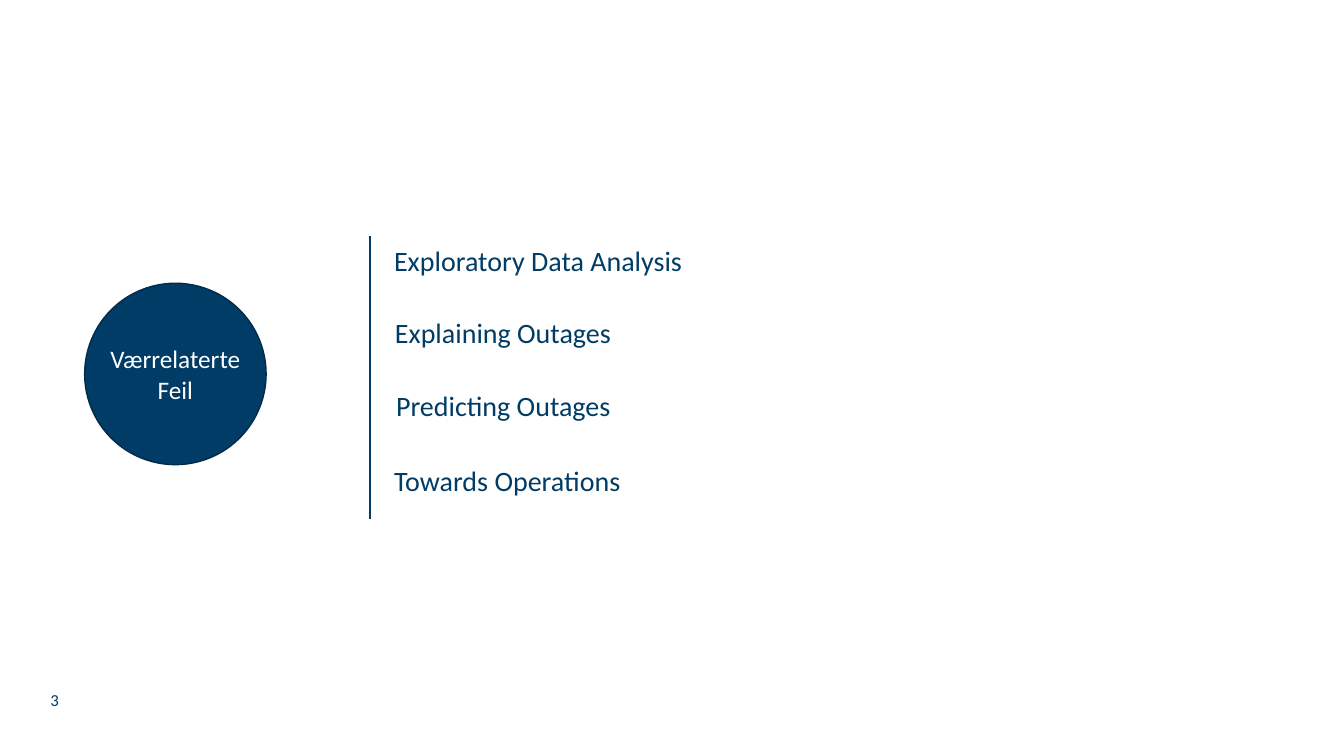
from dataclasses import dataclass

from lxml import etree
from pptx import Presentation
from pptx.dml.color import RGBColor
from pptx.enum.shapes import MSO_CONNECTOR, MSO_SHAPE
from pptx.enum.text import MSO_ANCHOR, MSO_AUTO_SIZE, PP_ALIGN
from pptx.oxml.ns import qn
from pptx.slide import Slide
from pptx.text.text import TextFrame
from pptx.util import Inches, Pt

OVAL = MSO_SHAPE.OVAL
STRAIGHT = MSO_CONNECTOR.STRAIGHT
MIDDLE = MSO_ANCHOR.MIDDLE
FIT_SHAPE = MSO_AUTO_SIZE.SHAPE_TO_FIT_TEXT
LEFT, CENTER = PP_ALIGN.LEFT, PP_ALIGN.CENTER

NAVY = RGBColor(0x00, 0x3C, 0x65)
DARK_NAVY = RGBColor(0x00, 0x2C, 0x4B)
WHITE = RGBColor(0xFF, 0xFF, 0xFF)
FONT = "Calibri"

SLIDE_WIDTH, SLIDE_HEIGHT = Inches(13.33), Inches(7.5)
TOPIC_HEIGHT = 5.87


@dataclass(frozen=True)
class Topic:
    """An agenda line, placed in percent of the slide's size."""
    text: str
    left: float
    top: float
    width: float


TOPICS = [
    Topic("Exploratory Data Analysis", 28.58, 31.6, 23.1),
    Topic("Explaining Outages", 28.65, 41.07, 17.7),
    Topic("Predicting Outages", 28.73, 50.8, 17.63),
    Topic("Towards Operations", 28.58, 60.67, 18.53),
]


def across(percent: float) -> int:
    return round(SLIDE_WIDTH * percent / 100)


def down(percent: float) -> int:
    return round(SLIDE_HEIGHT * percent / 100)


def write(frame: TextFrame, lines: list[str], size: int,
          color: RGBColor, alignment: PP_ALIGN = LEFT) -> None:
    for index, line in enumerate(lines):
        para = frame.add_paragraph() if index else frame.paragraphs[0]
        para.alignment = alignment
        span = para.add_run()
        span.text = line
        span.font.name = FONT
        span.font.size = Pt(size)
        span.font.color.rgb = color


def add_page_number(page: Slide, number: str) -> None:
    box = page.shapes.add_textbox(across(3.75), down(91.2), across(2.55), down(2.67))
    frame = box.text_frame
    frame.margin_left = frame.margin_right = 0
    frame.margin_top = frame.margin_bottom = 0
    frame.vertical_anchor = MIDDLE
    frame.word_wrap = True
    write(frame, [number], 12, NAVY)


def add_theme_circle(page: Slide, lines: list[str]) -> None:
    diameter = down(24)
    circle = page.shapes.add_shape(OVAL, across(6.3), down(37.47), diameter, diameter)
    circle.shadow.inherit = False
    circle.fill.solid()
    circle.fill.fore_color.rgb = NAVY
    circle.line.color.rgb = DARK_NAVY
    circle.line.width = Pt(1)
    circle.text_frame.word_wrap = False
    circle.text_frame.vertical_anchor = MIDDLE
    write(circle.text_frame, lines, 18, WHITE, CENTER)


def add_topic(page: Slide, topic: Topic) -> None:
    box = page.shapes.add_textbox(across(topic.left), down(topic.top),
                                  across(topic.width), down(TOPIC_HEIGHT))
    box.text_frame.word_wrap = False
    box.text_frame.auto_size = FIT_SHAPE
    write(box.text_frame, [topic.text], 20, NAVY)


def add_divider(page: Slide) -> None:
    divider = page.shapes.add_connector(STRAIGHT, across(27.53), down(31.2),
                                        across(27.53), down(68.67))
    divider.line.color.rgb = NAVY
    divider.line.width = Pt(2)
    etree.SubElement(divider._element.spPr, qn("a:effectLst"))


def main() -> None:
    deck = Presentation()
    deck.slide_width, deck.slide_height = SLIDE_WIDTH, SLIDE_HEIGHT
    page = deck.slides.add_slide(deck.slide_layouts[6])

    # Page number and theme
    add_page_number(page, "3")
    add_theme_circle(page, ["Værrelaterte", "Feil"])

    # Agenda beside its divider
    for topic in TOPICS:
        add_topic(page, topic)
    add_divider(page)

    deck.save("out.pptx")


if __name__ == "__main__":
    main()
